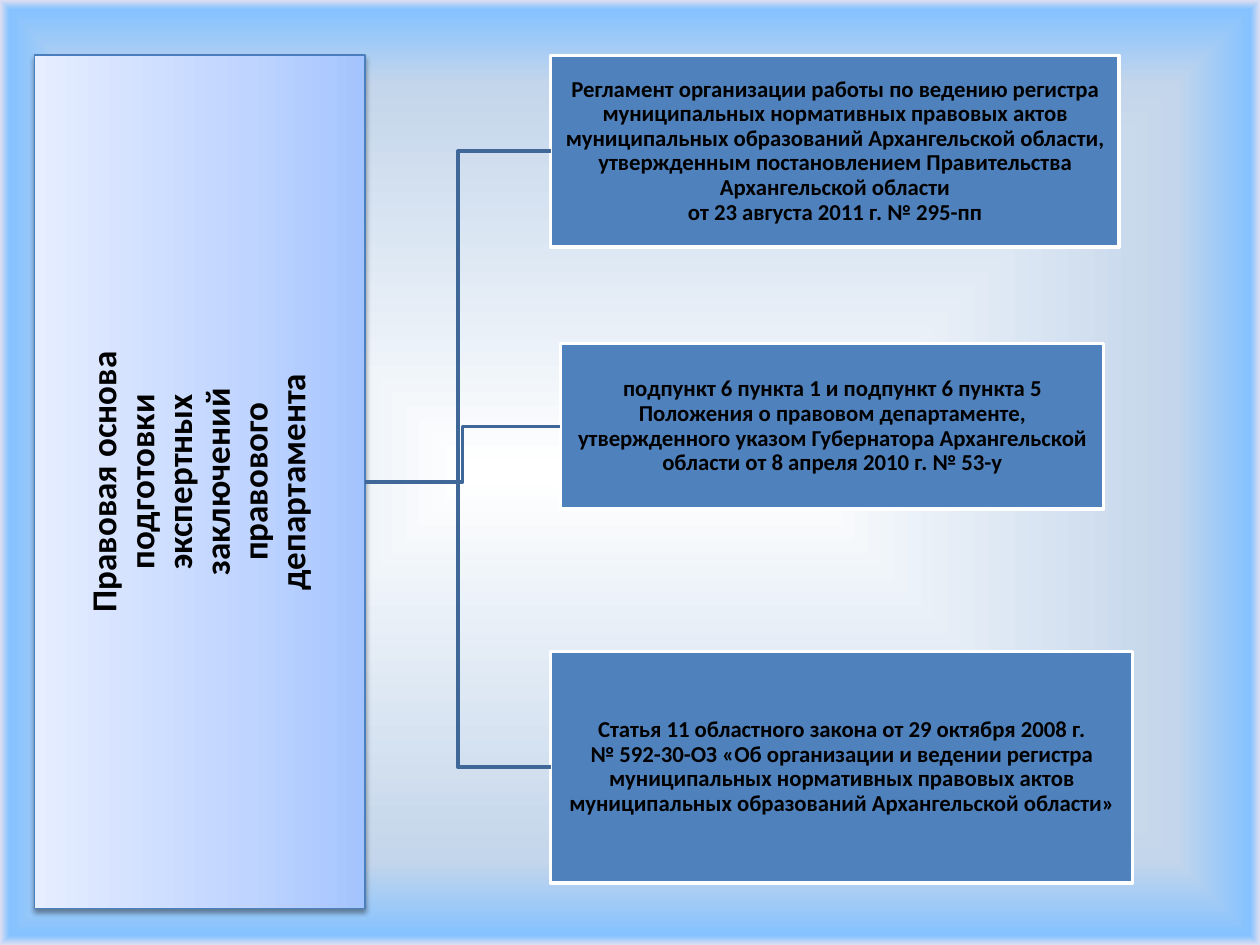
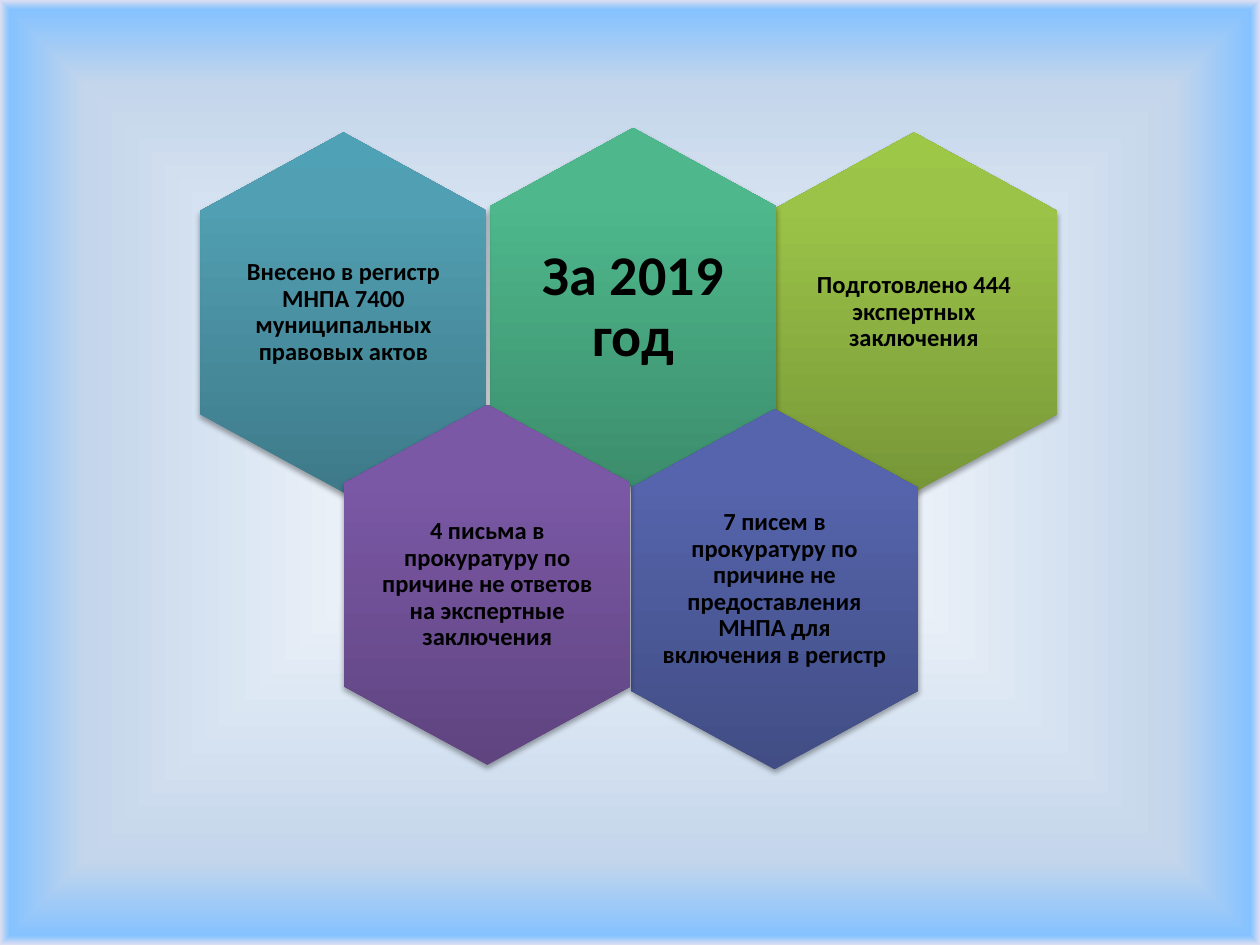
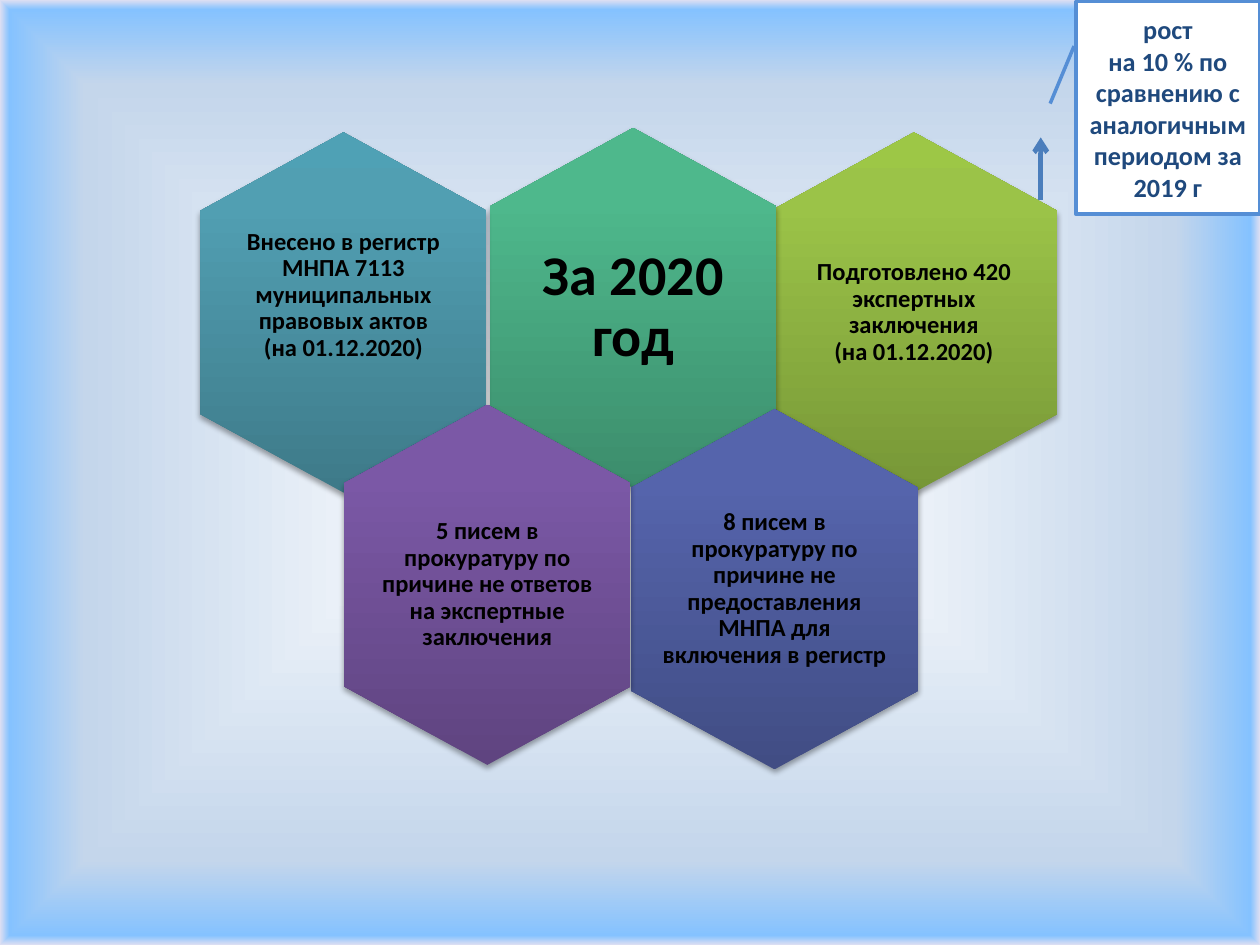
from copy import deepcopy

from lxml import etree
from pptx import Presentation
from pptx.dml.color import RGBColor
from pptx.enum.shapes import MSO_CONNECTOR, MSO_SHAPE
from pptx.enum.text import MSO_ANCHOR, PP_ALIGN
from pptx.oxml.ns import qn
from pptx.util import Cm, Pt

RECTANGLE = MSO_SHAPE.RECTANGLE
CALLOUT = MSO_SHAPE.LINE_CALLOUT_1
ELBOW = MSO_CONNECTOR.ELBOW
STRAIGHT = MSO_CONNECTOR.STRAIGHT
MIDDLE = MSO_ANCHOR.MIDDLE
CENTER = PP_ALIGN.CENTER

FONT = "Calibri"
BLACK = RGBColor(0x00, 0x00, 0x00)
WHITE = RGBColor(0xFF, 0xFF, 0xFF)
BLUE = RGBColor(0x4F, 0x81, 0xBD)
EDGE_BLUE = RGBColor(0x4B, 0x7E, 0xBC)
BRANCH_BLUE = RGBColor(0x3F, 0x67, 0x97)
CALLOUT_BLUE = RGBColor(0x55, 0x8E, 0xD5)
NAVY = RGBColor(0x1F, 0x49, 0x7D)

BACKGROUND = [
    (0, WHITE),
    (82, RGBColor(0xC4, 0xD6, 0xEB)),
    (98, RGBColor(0x85, 0xC2, 0xFF)),
    (100, RGBColor(0xDE, 0xDF, 0xF2)),
    (100, RGBColor(0xFF, 0xEB, 0xFA)),
]
PANEL = [
    (0, RGBColor(0xA4, 0xC4, 0xFF)),
    (35, RGBColor(0xBF, 0xD4, 0xFF)),
    (100, RGBColor(0xE6, 0xEE, 0xFF)),
]
LIME = [
    (0, RGBColor(0x77, 0x97, 0x37)),
    (80, RGBColor(0x9B, 0xC3, 0x48)),
    (100, RGBColor(0x9D, 0xC7, 0x46)),
]
GREEN = [
    (0, RGBColor(0x3C, 0x8D, 0x6C)),
    (80, RGBColor(0x4E, 0xB8, 0x8C)),
    (100, RGBColor(0x4C, 0xBB, 0x8D)),
]
TEAL = [
    (0, RGBColor(0x3E, 0x7A, 0x89)),
    (80, RGBColor(0x51, 0x9F, 0xB2)),
    (100, RGBColor(0x4F, 0xA1, 0xB5)),
]
INDIGO = [
    (0, RGBColor(0x41, 0x4D, 0x84)),
    (80, RGBColor(0x55, 0x64, 0xAC)),
    (100, RGBColor(0x54, 0x63, 0xAE)),
]
PURPLE = [
    (0, RGBColor(0x5F, 0x44, 0x80)),
    (80, RGBColor(0x7B, 0x58, 0xA6)),
    (100, RGBColor(0x7C, 0x57, 0xA8)),
]


def write(shape, *texts, size, color=BLACK, spacing=0.9, inset=(0.03, 0.03), lift=0):
    frame = shape.text_frame
    frame.word_wrap = True
    frame.vertical_anchor = MIDDLE
    frame.margin_left = frame.margin_right = Cm(inset[0])
    frame.margin_top = Cm(inset[1])
    frame.margin_bottom = Cm(inset[1] + lift)
    for index, text in enumerate(texts):
        paragraph = frame.add_paragraph() if index else frame.paragraphs[0]
        paragraph.text = text
        paragraph.alignment = CENTER
        paragraph.line_spacing = spacing
        for run in paragraph.runs:
            run.font.name = FONT
            run.font.size = Pt(size)
            run.font.bold = True
            run.font.color.rgb = color
        for line_break in paragraph._p.findall(qn("a:br")):
            line_break.append(deepcopy(paragraph.runs[0]._r.rPr))


def paint(fill, properties, stops, angle=None, shadow=None):
    fill.gradient()
    gradient = properties.find(qn("a:gradFill"))
    for child in list(gradient):
        gradient.remove(child)
    stop_list = etree.SubElement(gradient, qn("a:gsLst"))
    for position, color in stops:
        stop = etree.SubElement(stop_list, qn("a:gs"), pos=str(position * 1000))
        etree.SubElement(stop, qn("a:srgbClr"), val=str(color))
    if angle is None:
        direction = etree.SubElement(gradient, qn("a:path"), path="shape")
        sides = dict.fromkeys("ltrb", "50000")
        etree.SubElement(direction, qn("a:fillToRect"), **sides)
    else:
        etree.SubElement(gradient, qn("a:lin"), ang=str(angle * 60000), scaled="0")
    if shadow:
        effects = properties.find(qn("a:effectLst"))
        outer = etree.SubElement(
            effects, qn("a:outerShdw"), blurRad=str(Pt(3.1)), dist=str(Pt(1.8)),
            dir="5400000", rotWithShape="0")
        shade = etree.SubElement(outer, qn("a:srgbClr"), val=str(BLACK))
        etree.SubElement(shade, qn("a:alpha"), val=str(shadow * 1000))


presentation = Presentation()
presentation.slide_width = Cm(25.4)
presentation.slide_height = Cm(19.05)
master = presentation.slide_master
background_fill = master.background.fill
paint(background_fill, master._element.find(".//" + qn("p:bgPr")), BACKGROUND)
blank_layout = presentation.slide_layouts[6]

slide = presentation.slides.add_slide(blank_layout)
panel = slide.shapes.add_shape(RECTANGLE, Cm(0.69), Cm(1.11), Cm(6.67), Cm(17.21))
panel.shadow.inherit = False
panel.line.color.rgb = EDGE_BLUE
panel.line.width = Pt(0.75)
paint(panel.fill, panel._element.spPr, PANEL, angle=180, shadow=38)

heading = slide.shapes.add_textbox(Cm(0.69), Cm(6.39), Cm(6.67), Cm(6.65))
write(heading, "Правовая основа подготовки экспертных заключений правового департамента", size=20)
heading.text_frame._txBody.bodyPr.set("vert", "vert270")

legal_acts = [
    (11.1, 1.12, 11.46, 3.86,
     "Регламент организации работы по ведению регистра муниципальных нормативных "
     "правовых актов муниципальных образований Архангельской области, утвержденным "
     "постановлением Правительства Архангельской области\n"
     "от 23 августа 2011 г. № 295-пп"),
    (11.3, 6.93, 10.95, 3.33,
     "подпункт 6 пункта 1 и подпункт 6 пункта 5\n"
     "Положения о правовом департаменте, утвержденного указом Губернатора "
     "Архангельской области от 8 апреля 2010 г. № 53-у"),
    (11.1, 13.13, 11.73, 4.67,
     "Статья 11 областного закона от 29 октября 2008 г.\n"
     "№ 592-30-ОЗ «Об организации и ведении регистра муниципальных нормативных "
     "правовых актов муниципальных образований Архангельской области»"),
]
for left, top, width, height, text in legal_acts:
    act = slide.shapes.add_shape(RECTANGLE, Cm(left), Cm(top), Cm(width), Cm(height))
    act.shadow.inherit = False
    act.fill.solid()
    act.fill.fore_color.rgb = BLUE
    act.line.color.rgb = WHITE
    act.line.width = Pt(2)
    write(act, text, size=13)
    branch = slide.shapes.add_connector(ELBOW, 0, 0, 0, 0)
    branch.begin_connect(panel, 3)
    branch.end_connect(act, 1)
    branch.line.color.rgb = BRANCH_BLUE
    branch.line.width = Pt(2)
    etree.SubElement(branch._element.spPr, qn("a:effectLst"))

HEXAGON_WIDTH, HEXAGON_HEIGHT, SHOULDER = 5.77, 7.26, 1.58
hexagons = [
    (15.54, 2.67, LIME, 14, (0.64, 0.71)),
    (9.88, 2.58, GREEN, 32, (0.66, 0.74)),
    (4.04, 2.67, TEAL, 14, (0.51, 0.58)),
    (12.73, 8.25, INDIGO, 14, (0.61, 0.69)),
    (6.94, 8.16, PURPLE, 14, (0.51, 0.58)),
]
years = [
    [("Подготовлено 444 экспертных заключения", 0),
     ("За 2019 год", 0),
     ("Внесено в регистр МНПА 7400 муниципальных правовых актов", 0),
     ("7 писем в прокуратуру по причине не предоставления МНПА для включения в регистр", 0),
     ("4 письма в прокуратуру по причине не ответов на экспертные заключения", 0)],
    [("Подготовлено 420 экспертных заключения\n(на 01.12.2020)", 0),
     ("За 2020 год", 0),
     ("Внесено в регистр МНПА 7113 муниципальных правовых актов\n(на 01.12.2020)", 0.7),
     ("8 писем в прокуратуру по причине не предоставления МНПА для включения в регистр", 0),
     ("5 писем в прокуратуру по причине не ответов на экспертные заключения", 0)],
]
for results in years:
    slide = presentation.slides.add_slide(blank_layout)
    for (left, top, stops, size, inset), (text, lift) in zip(hexagons, results):
        middle, right = left + HEXAGON_WIDTH / 2, left + HEXAGON_WIDTH
        bottom = top + HEXAGON_HEIGHT
        outline = slide.shapes.build_freeform(Cm(middle), Cm(top))
        outline.add_line_segments([
            (Cm(right), Cm(top + SHOULDER)),
            (Cm(right), Cm(bottom - SHOULDER)),
            (Cm(middle), Cm(bottom)),
            (Cm(left), Cm(bottom - SHOULDER)),
            (Cm(left), Cm(top + SHOULDER)),
        ], close=True)
        hexagon = outline.convert_to_shape()
        hexagon.shadow.inherit = False
        hexagon.line.fill.background()
        paint(hexagon.fill, hexagon._element.spPr, stops, angle=270, shadow=35)
        write(hexagon, text, size=size, inset=inset, lift=lift)

callout = slide.shapes.add_shape(CALLOUT, Cm(21.69), Cm(0.03), Cm(3.71), Cm(4.29))
for index, value in enumerate((0.21, -0.01, 0.48, -0.14)):
    callout.adjustments[index] = value
callout.shadow.inherit = False
callout.fill.solid()
callout.fill.fore_color.rgb = WHITE
callout.line.color.rgb = CALLOUT_BLUE
callout.line.width = Pt(2)
write(callout, "рост", "на 10 % по сравнению с аналогичным периодом за 2019 г",
      size=15, color=NAVY, spacing=1.0, inset=(0.25, 0.13))

growth_arrow = slide.shapes.add_connector(STRAIGHT, Cm(20.98), Cm(4.04), Cm(20.98), Cm(2.77))
growth_arrow.line.color.rgb = EDGE_BLUE
growth_arrow.line.width = Pt(2.75)
arrow_properties = growth_arrow._element.spPr
etree.SubElement(arrow_properties.find(qn("a:ln")), qn("a:tailEnd"), type="arrow")
etree.SubElement(arrow_properties, qn("a:effectLst"))

presentation.save("out.pptx")
